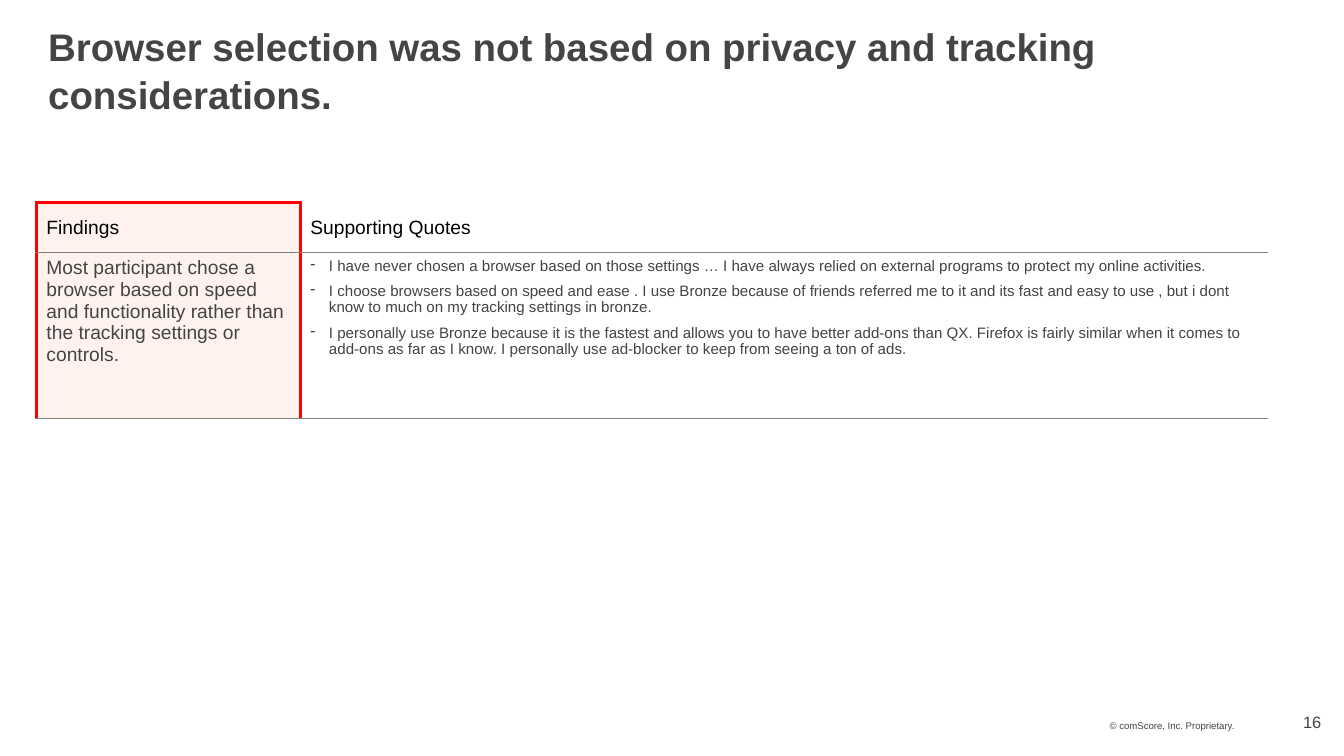
from dataclasses import dataclass

from lxml.etree import SubElement
from pptx import Presentation
from pptx.dml.color import RGBColor as Rgb
from pptx.enum.text import MSO_ANCHOR as Anchor, PP_ALIGN as Align
from pptx.oxml.ns import qn
from pptx.util import Cm, Pt


@dataclass(frozen=True)
class Theme:
    font: str = "Arial"
    ink: str = "444444"
    heading: str = "000000"
    accent: str = "FF0000"
    rule: str = "808080"
    tint: str = "FFCFB8"
    tint_alpha: int = 25
    title_size: int = 28
    body_size: int = 14
    quote_size: int = 11
    number_size: int = 12
    footer_size: int = 7


THEME = Theme()
RED = (THEME.accent, 2.25)
GREY = (THEME.rule, 1)

TITLE = "Browser selection was not based on privacy and tracking considerations."
FINDING = (
    "Most participant chose a browser based on speed and functionality "
    "rather than the tracking settings or controls."
)
QUOTES = [
    "I have never chosen a browser based on those settings … I have always "
    "relied on external programs to protect my online activities.",
    "I choose browsers based on speed and ease . I use Bronze because of friends "
    "referred me to it and its fast and easy to use , but i dont know to much on "
    "my tracking settings in bronze.",
    "I personally use Bronze because it is the fastest and allows you to have "
    "better add-ons than QX. Firefox is fairly similar when it comes to add-ons "
    "as far as I know. I personally use ad-blocker to keep from seeing a ton of ads.",
]


def write(frame, *texts, size, color=THEME.ink, bold=False, align=Align.LEFT,
          line_spacing=None, after=0, bullet=None):
    """Fill a text frame with one formatted paragraph per text."""
    for index, text in enumerate(texts):
        paragraph = frame.add_paragraph() if index else frame.paragraphs[0]
        paragraph.alignment = align
        paragraph.line_spacing = line_spacing
        paragraph.space_before = Pt(0)
        paragraph.space_after = Pt(after)
        if bullet:
            properties = paragraph._p.get_or_add_pPr()
            properties.set("marL", str(Cm(0.48)))
            properties.set("indent", str(-Cm(0.48)))
            SubElement(properties, qn("a:buChar"), char=bullet)
        run = paragraph.add_run()
        run.text = text
        run.font.name = THEME.font
        run.font.size = Pt(size)
        run.font.bold = bold
        run.font.color.rgb = Rgb.from_string(color)


def add_text(slide, box, text, side=0, top=0.15, anchor=Anchor.BOTTOM, **style):
    """Place a wrapped text box with the given insets in centimetres."""
    frame = slide.shapes.add_textbox(*map(Cm, box)).text_frame
    frame.word_wrap = True
    frame.vertical_anchor = anchor
    frame.margin_left = frame.margin_right = Cm(side)
    frame.margin_top, frame.margin_bottom = Cm(top), Cm(0.15)
    write(frame, text, **style)


def set_borders(cell, **borders):
    """Draw the named sides (L, R, T, B) of a cell and clear the others."""
    properties = cell._tc.get_or_add_tcPr()
    for side in "LRTB":
        line = SubElement(properties, qn(f"a:ln{side}"))
        if side in borders:
            color, width = borders[side]
            line.set("w", str(Pt(width)))
            fill = SubElement(line, qn("a:solidFill"))
            SubElement(fill, qn("a:srgbClr"), val=color)
        else:
            SubElement(line, qn("a:noFill"))


def tint(cell):
    """Give a cell the translucent highlight fill."""
    cell.fill.solid()
    cell.fill.fore_color.rgb = Rgb.from_string(THEME.tint)
    color = cell._tc.tcPr.find(qn("a:solidFill")).find(qn("a:srgbClr"))
    SubElement(color, qn("a:alpha"), val=str(THEME.tint_alpha * 1000))


def add_findings_table(slide):
    """Build the table that pairs the finding with its quotes."""
    table = slide.shapes.add_table(2, 2, Cm(0.94), Cm(5.21), Cm(31.65), Cm(5.55)).table
    table.first_row = table.horz_banding = False
    for column, width in zip(table.columns, (6.78, 24.87)):
        column.width = Cm(width)
    for row, height in zip(table.rows, (1.28, 4.27)):
        row.height = Cm(height)

    for row in range(2):
        finding, quote = table.cell(row, 0), table.cell(row, 1)
        top = {"T": GREY} if row else {}
        set_borders(finding, **{"L": RED, "R": RED, "T": RED, "B": GREY, **top})
        set_borders(quote, L=RED, B=GREY, **top)
        tint(finding)
        quote.fill.background()

    for column, heading in enumerate(("Findings", "Supporting Quotes")):
        cell = table.cell(0, column)
        cell.vertical_anchor = Anchor.MIDDLE
        write(cell.text_frame, heading, size=THEME.body_size, color=THEME.heading)
    write(table.cell(1, 0).text_frame, FINDING, size=THEME.body_size, after=12)
    write(table.cell(1, 1).text_frame, *QUOTES, size=THEME.quote_size, after=6, bullet="-")


def main():
    """Build and save the slide."""
    deck = Presentation()
    deck.slide_width, deck.slide_height = Cm(34.54), Cm(19.43)
    slide = deck.slides.add_slide(deck.slide_layouts[6])
    add_text(slide, (28.52, 17.65, 3.81, 1.3), "© comScore, Inc. Proprietary.",
             size=THEME.footer_size, line_spacing=Pt(7.9))
    add_text(slide, (31.8, 17.93, 2.77, 1.02), "16", side=0.61,
             size=THEME.number_size, align=Align.RIGHT)
    add_findings_table(slide)
    add_text(slide, (0.94, 0.51, 33.02, 2.92), TITLE, side=0.3, top=0,
             anchor=Anchor.TOP, size=THEME.title_size, bold=True, line_spacing=1.06)
    deck.save("out.pptx")


if __name__ == "__main__":
    main()
